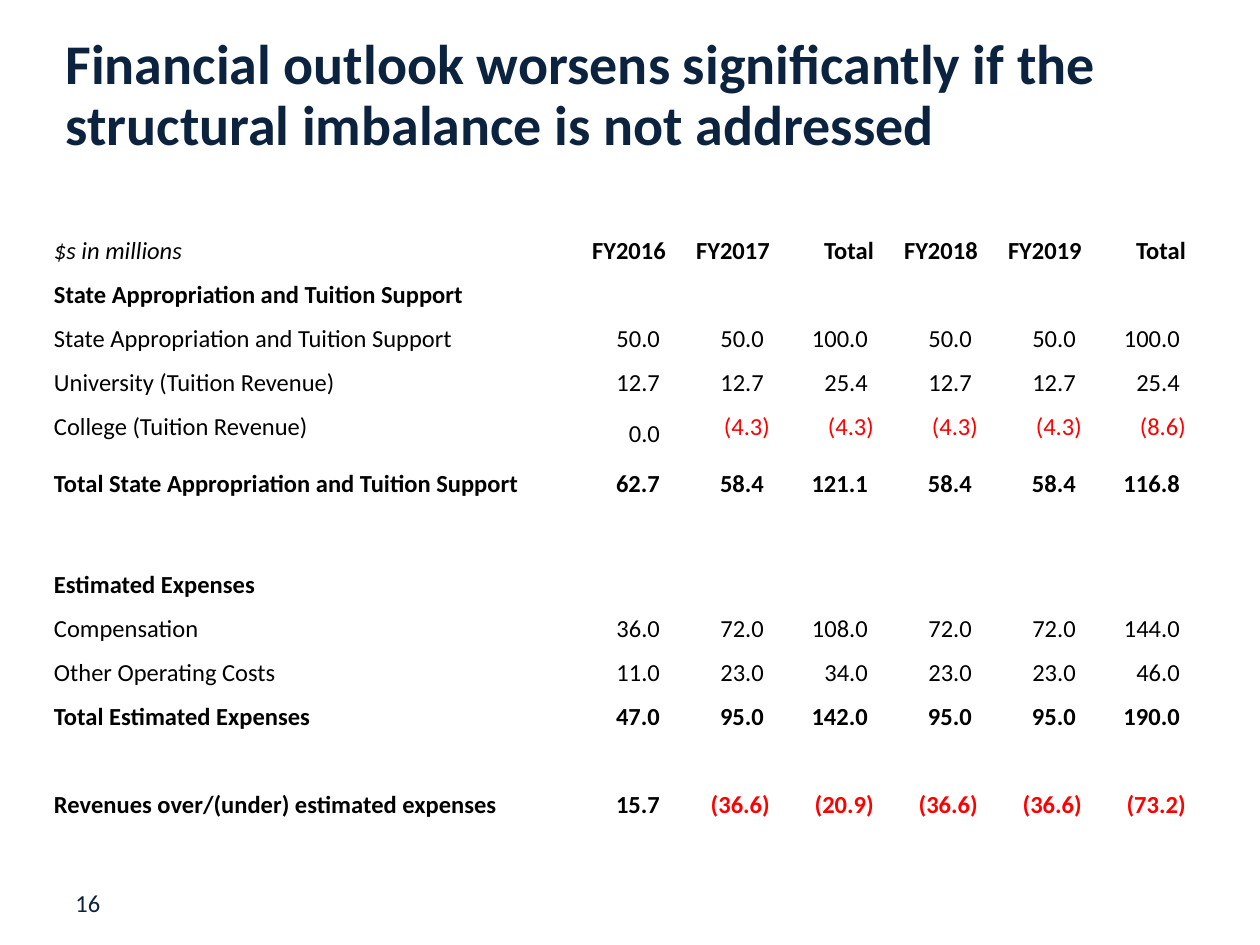
from dataclasses import dataclass

from pptx import Presentation
from pptx.dml.color import RGBColor
from pptx.enum.text import MSO_ANCHOR as Anchor, MSO_AUTO_SIZE as AutoSize, PP_ALIGN as Align
from pptx.util import Emu, Pt

PX = 914400 // 126


@dataclass(frozen=True)
class Theme:
    font: str = "Calibri"
    navy: str = "0C2340"
    black: str = "000000"
    red: str = "FF0000"
    title_size: int = 32
    body_size: int = 14


def px(count):
    return Emu(count * PX)


class SlideBuilder:
    def __init__(self, deck, theme):
        self.theme = theme
        self.page = deck.slides.add_slide(deck.slide_layouts[5])

    def style(self, para, color, size=None, bold=False, italic=False, align=Align.LEFT):
        para.alignment = align
        font = para.font
        font.name = self.theme.font
        font.size = Pt(size or self.theme.body_size)
        font.bold, font.italic = bold, italic
        font.color.rgb = RGBColor.from_string(color)

    def place(self, shape, left, top, width, height):
        shape.left, shape.top = px(left), px(top)
        shape.width, shape.height = px(width), px(height)

    def title(self, text, *bounds):
        box = self.page.shapes.title
        self.place(box, *bounds)
        frame = box.text_frame
        frame.text = text
        frame.auto_size = AutoSize.NONE
        frame.vertical_anchor = Anchor.MIDDLE
        para = frame.paragraphs[0]
        para.line_spacing = 0.9
        self.style(para, self.theme.navy, self.theme.title_size, bold=True)

    def page_number(self, number, *bounds):
        box = self.page.shapes.add_textbox(*map(px, bounds))
        box.text_frame.word_wrap = True
        box.text_frame.text = str(number)
        self.style(box.text_frame.paragraphs[0], self.theme.navy)

    def table(self, rows, left, top, widths, heights):
        frame = self.page.shapes.add_table(
            len(rows), len(widths), px(left), px(top), px(sum(widths)), px(sum(heights)))
        table = frame.table
        table.first_row = table.horz_banding = False
        for column, width in zip(table.columns, widths):
            column.width = px(width)
        for row, height, (kind, *texts) in zip(table.rows, heights, rows):
            row.height = px(height)
            texts += [""] * (len(widths) - len(texts))
            for index, (cell, text) in enumerate(zip(row.cells, texts)):
                self.cell(cell, text, kind, is_label=index == 0)
        return table

    def cell(self, cell, text, kind, is_label):
        """Align figures on their last digit, so that a closing bracket overhangs."""
        negative = text.startswith("(")
        overhang = 0 if is_label or negative or kind == "header" else 6
        cell.fill.background()
        cell.vertical_anchor = Anchor.MIDDLE
        cell.margin_left = cell.margin_top = px(1)
        cell.margin_right, cell.margin_bottom = px(1 + overhang), 0
        cell.text = text
        header_label = kind == "header" and is_label
        self.style(
            cell.text_frame.paragraphs[0],
            self.theme.red if negative else self.theme.black,
            bold=kind != "plain" and not header_label,
            italic=header_label,
            align=Align.LEFT if is_label else Align.RIGHT)


SUPPORT = "State Appropriation and Tuition Support"
BLANK = ("plain",)
ROWS = [
    BLANK,
    ("header", "$s in millions", "FY2016", "FY2017", "Total", "FY2018", "FY2019", "Total"),
    ("bold", SUPPORT),
    ("plain", SUPPORT, "50.0", "50.0", "100.0", "50.0", "50.0", "100.0"),
    ("plain", "University (Tuition Revenue)", "12.7", "12.7", "25.4", "12.7", "12.7", "25.4"),
    ("plain", "College (Tuition Revenue)", "0.0", "(4.3)", "(4.3)", "(4.3)", "(4.3)", "(8.6)"),
    ("bold", f"Total {SUPPORT}", "62.7", "58.4", "121.1", "58.4", "58.4", "116.8"),
    BLANK,
    ("bold", "Estimated Expenses"),
    ("plain", "Compensation", "36.0", "72.0", "108.0", "72.0", "72.0", "144.0"),
    ("plain", "Other Operating Costs", "11.0", "23.0", "34.0", "23.0", "23.0", "46.0"),
    ("bold", "Total Estimated Expenses", "47.0", "95.0", "142.0", "95.0", "95.0", "190.0"),
    BLANK,
    ("bold", "Revenues over/(under) estimated expenses",
     "15.7", "(36.6)", "(20.9)", "(36.6)", "(36.6)", "(73.2)"),
]


def main():
    deck = Presentation()
    deck.slide_width, deck.slide_height = px(1260), px(945)
    slide = SlideBuilder(deck, Theme())
    slide.page_number(16, 63, 882, 273, 43)
    table = slide.table(ROWS, 53, 189, [467, 147] + [104] * 5,
                        [40] + [44] * 5 + [70] + [44] * 7)
    college_2016 = table.cell(5, 1)
    college_2016.vertical_anchor = Anchor.BOTTOM
    slide.title("Financial outlook worsens significantly if the\v"
                "structural imbalance is not addressed", 53, 32, 1133, 130)
    deck.save("out.pptx")


if __name__ == "__main__":
    main()
